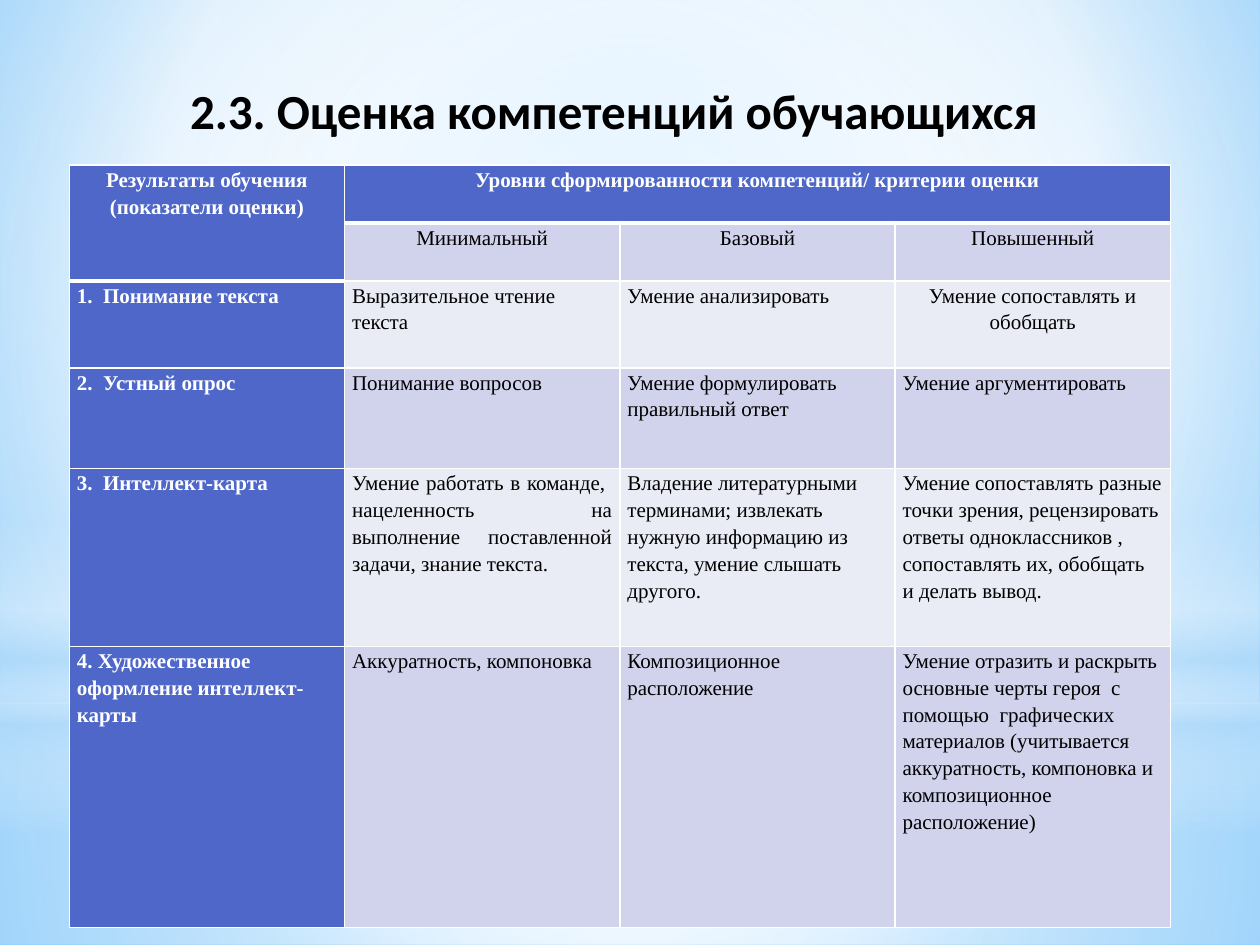
from lxml import etree
from pptx import Presentation
from pptx.dml.color import RGBColor
from pptx.enum import shapes, text
from pptx.oxml import ns
from pptx.util import Inches, Pt

THEME = {
    "title_font": "Calibri", "title_size": 28,
    "table_font": "Times New Roman", "table_size": 12,
    "ink": "000000", "paper": "FFFFFF", "header": "4E67C8",
    "bands": ["D0D3EB", "E9EBF5"],
    "sky": "9ED5FF", "deep_sky": "5BB9FF", "mist": "B4DCFA",
}
PAPER, MIST = THEME["paper"], THEME["mist"]
LEFT, CENTER, JUSTIFY = text.PP_ALIGN.LEFT, text.PP_ALIGN.CENTER, text.PP_ALIGN.JUSTIFY
RECT, OVAL = shapes.MSO_SHAPE.RECTANGLE, shapes.MSO_SHAPE.OVAL

TITLE = "2.3. Оценка компетенций обучающихся"
ROWS = [
    ["Результаты обучения (показатели оценки)",
     "Уровни сформированности компетенций/ критерии оценки", "", ""],
    ["", "Минимальный", "Базовый", "Повышенный"],
    ["1.  Понимание текста", "Выразительное чтение текста",
     "Умение анализировать", "Умение сопоставлять и обобщать"],
    ["2.  Устный опрос", "Понимание вопросов",
     "Умение формулировать правильный ответ", "Умение аргументировать"],
    ["3.  Интеллект-карта",
     "Умение работать в команде,  нацеленность на выполнение поставленной задачи, знание текста.",
     "Владение литературными терминами; извлекать нужную информацию из текста, "
     "умение слышать другого.",
     "Умение сопоставлять разные точки зрения, рецензировать ответы одноклассников , "
     "сопоставлять их, обобщать  и делать вывод."],
    ["4. Художественное оформление интеллект- карты", "Аккуратность, компоновка",
     "Композиционное расположение",
     "Умение отразить и раскрыть основные черты героя  с помощью  графических материалов "
     "(учитывается аккуратность, компоновка и композиционное расположение)"],
]
ROW_HEIGHTS = [0.46, 0.46, 0.69, 0.8, 1.41, 2.23]
COLUMN_WIDTH = 8.74 / 4
ALIGNMENTS = {(2, 3): CENTER, (4, 1): JUSTIFY, (5, 1): JUSTIFY}

# Gradient stops: position %, colour, opacity %
SKY_STOPS = [(0, THEME["sky"], 100), (60, PAPER, 100), (100, THEME["deep_sky"], 100)]
# Shape, place, stops, angle (None for a circular gradient)
GLOWS = [
    (RECT, (0, 5.58, 10, 1.92), [(0, PAPER, 91), (37, PAPER, 76), (100, MIST, 79)], None),
    (RECT, (0, 0, 10, 5.58), [(0, PAPER, 89), (48, PAPER, 62), (100, MIST, 79)], None),
    (RECT, (0, 4.12, 10, 2.5), [(0, PAPER, 0), (29, PAPER, 30), (45, MIST, 40),
                                (55, PAPER, 26), (65, MIST, 60), (100, PAPER, 0)], 90),
    (OVAL, (0, 1.75, 10, 5.58), [(0, PAPER, 100), (56, PAPER, 0)], None),
]


def add_element(parent, tag, **attributes):
    values = {name: str(value) for name, value in attributes.items()}
    return etree.SubElement(parent, ns.qn(tag), values)


def set_gradient(fill, holder, stops, angle=None, focus=(50, 50, 50, 50)):
    """Swap the fill inside holder for a gradient; focus is left, top, right, bottom in %."""
    fill.solid()
    solid = holder.find(ns.qn("a:solidFill"))
    gradient = etree.Element(ns.qn("a:gradFill"), rotWithShape="1")
    stop_list = add_element(gradient, "a:gsLst")
    for position, color, opacity in stops:
        stop = add_element(stop_list, "a:gs", pos=position * 1000)
        add_element(add_element(stop, "a:srgbClr", val=color), "a:alpha", val=opacity * 1000)
    if angle is None:
        circle = add_element(gradient, "a:path", path="circle")
        add_element(circle, "a:fillToRect",
                    **{side: share * 1000 for side, share in zip("ltrb", focus)})
    else:
        add_element(gradient, "a:lin", ang=angle * 60000, scaled=0)
    holder.replace(solid, gradient)


def write(paragraph, words, font, size, color, bold):
    run = paragraph.add_run()
    run.text = words
    run.font.color.rgb = RGBColor.from_string(color)
    for name, value in {"name": font, "size": Pt(size), "bold": bold}.items():
        setattr(run.font, name, value)


def set_borders(cell, widths):
    properties = cell._tc.get_or_add_tcPr()
    for side, width in widths.items():
        line = add_element(properties, f"a:ln{side}", w=Pt(width))
        add_element(add_element(line, "a:solidFill"), "a:srgbClr", val=PAPER)


def add_background(slide):
    fill = slide.background.fill
    fill.solid()
    holder = slide._element.cSld.find(ns.qn("p:bg")).find(ns.qn("p:bgPr"))
    set_gradient(fill, holder, SKY_STOPS, focus=(20, 10, 20, 60))
    for kind, place, stops, angle in GLOWS:
        glow = slide.shapes.add_shape(kind, *map(Inches, place))
        glow.shadow.inherit = False
        glow.line.fill.background()
        set_gradient(glow.fill, glow._element.spPr, stops, angle)


def add_title(slide):
    frame = slide.shapes.add_textbox(*map(Inches, (1.41, 0.59, 7.01, 0.57))).text_frame
    layout = {"word_wrap": False, "vertical_anchor": text.MSO_ANCHOR.MIDDLE,
              "auto_size": text.MSO_AUTO_SIZE.SHAPE_TO_FIT_TEXT}
    for name, value in layout.items():
        setattr(frame, name, value)
    write(frame.paragraphs[0], TITLE, THEME["title_font"], THEME["title_size"],
          THEME["ink"], True)


def fill_cell(cell, row, column, words):
    is_header = row == 0 or column == 0
    margins = {"margin_left": 0.06, "margin_right": 0.06, "margin_top": 0, "margin_bottom": 0}
    for name, value in margins.items():
        setattr(cell, name, Inches(value))
    header_end = row == 0 or (row, column) == (1, 0)
    below_header = row == 1 or (row, column) == (2, 0)
    set_borders(cell, {"L": 1, "R": 1, "T": 3 if below_header else 1,
                       "B": 3 if header_end else 1})
    color = THEME["header"] if is_header else THEME["bands"][(row + 1) % 2]
    cell.fill.solid()
    cell.fill.fore_color.rgb = RGBColor.from_string(color)
    if words:
        paragraph = cell.text_frame.paragraphs[0]
        paragraph.alignment = ALIGNMENTS.get((row, column), CENTER if row < 2 else LEFT)
        paragraph.line_spacing = 1.15
        write(paragraph, words, THEME["table_font"], THEME["table_size"],
              PAPER if is_header else THEME["ink"], is_header)


def add_criteria(slide):
    place = (0.55, 1.31, 8.74, sum(ROW_HEIGHTS))
    table = slide.shapes.add_table(len(ROWS), len(ROWS[0]), *map(Inches, place)).table
    table.first_row = table.horz_banding = False
    for column in table.columns:
        column.width = Inches(COLUMN_WIDTH)
    for row, height in zip(table.rows, ROW_HEIGHTS):
        row.height = Inches(height)
    table.cell(0, 0).merge(table.cell(1, 0))
    table.cell(0, 1).merge(table.cell(0, 3))
    for row, entries in enumerate(ROWS):
        for column, words in enumerate(entries):
            fill_cell(table.cell(row, column), row, column, words)


def main():
    deck = Presentation()
    deck.slide_width, deck.slide_height = Inches(10), Inches(7.5)
    slide = deck.slides.add_slide(deck.slide_layouts[6])
    add_background(slide)
    add_title(slide)
    add_criteria(slide)
    deck.save("out.pptx")


if __name__ == "__main__":
    main()
